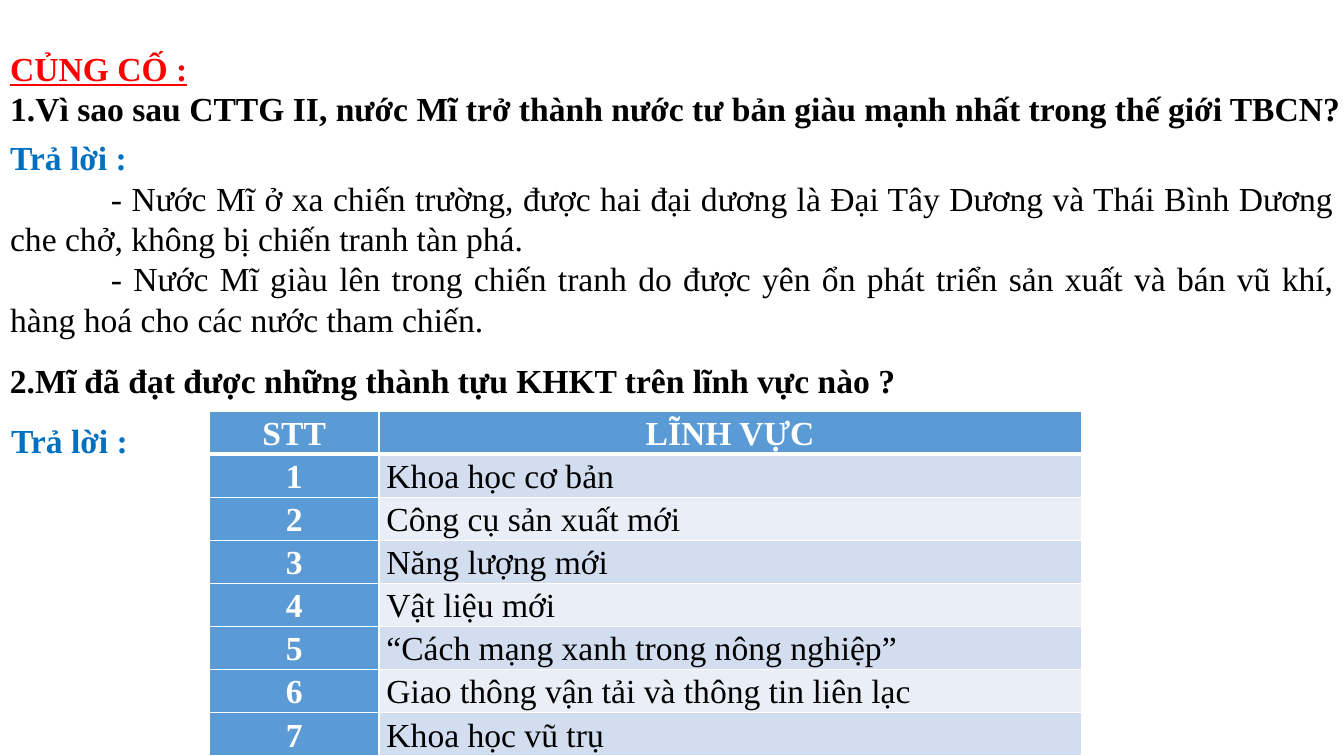
from dataclasses import dataclass
from lxml.etree import SubElement
from pptx import Presentation
from pptx.dml.color import RGBColor as RGB
from pptx.enum.text import MSO_ANCHOR as Anchor, MSO_AUTO_SIZE as Auto, PP_ALIGN as Align
from pptx.oxml.ns import qn
from pptx.util import Cm, Pt


@dataclass(frozen=True)
class Theme:
    font: str = "Times New Roman"
    size: int = 24
    red: str = "FF0000"
    blue: str = "0070C0"
    black: str = "000000"
    white: str = "FFFFFF"
    head: str = "5B9BD5"
    bands: tuple = ("D2DEEF", "EAEFF7")


T = Theme()

ANSWER = "Trả lời :"
TITLE = [
    ("CỦNG CỐ :", dict(color=T.red, bold=True, line=True)),
    ("1.Vì sao sau CTTG II, nước Mĩ trở thành nước tư bản giàu mạnh nhất "
     "trong thế giới TBCN?", dict(bold=True)),
]
POINT = dict(align=Align.JUSTIFY, indent=Cm(2.54))
REASONS = [
    (ANSWER, dict(color=T.blue, bold=True, align=Align.JUSTIFY)),
    ("- Nước Mĩ ở xa chiến trường, được hai đại dương là Đại Tây Dương và "
     "Thái Bình Dương che chở, không bị chiến tranh tàn phá.", POINT),
    ("- Nước Mĩ giàu lên trong chiến tranh do được yên ổn phát triển sản xuất "
     "và bán vũ khí, hàng hoá cho các nước tham chiến.", POINT),
]
SECOND = [("2.Mĩ đã đạt được những thành tựu KHKT trên lĩnh vực nào ?", dict(bold=True))]
REPLY = [(ANSWER, dict(color=T.blue, bold=True))]
HEADS = ("STT", "LĨNH VỰC")
FIELDS = [
    "Khoa học cơ bản",
    "Công cụ sản xuất mới",
    "Năng lượng mới",
    "Vật liệu mới",
    "“Cách mạng xanh trong nông nghiệp”",
    "Giao thông vận tải và thông tin liên lạc",
    "Khoa học vũ trụ",
]

WIDE, HIGH = Cm(33.87), Cm(19.05)
COLS = (Cm(4.27), Cm(17.7))
TABLE = (Cm(5.28), Cm(10.36), sum(COLS), Cm(8.69))


def write(para, text, color=T.black, bold=False, line=False,
          align=Align.LEFT, indent=0, space=1.0):
    para.alignment = align
    para.line_spacing = space
    para.space_before = para.space_after = Pt(0)
    props = para._p.get_or_add_pPr()
    props.set("marL", "0")
    props.set("indent", str(int(indent)))
    SubElement(props, qn("a:buNone"))
    run = para.add_run()
    run.text = text
    font = run.font
    font.name, font.size = T.font, Pt(T.size)
    font.bold, font.underline = bold, line
    font.color.rgb = RGB.from_string(color)


def fill_box(box, place, lines):
    box.left, box.top, box.width, box.height = place
    frame = box.text_frame
    frame.word_wrap = True
    frame.auto_size = Auto.NONE
    frame.vertical_anchor = Anchor.TOP
    for i, (text, look) in enumerate(lines):
        para = frame.add_paragraph() if i else frame.paragraphs[0]
        write(para, text, **look)


def edge(cell, side, width):
    line = SubElement(cell._tc.get_or_add_tcPr(), qn(f"a:{side}"), w=str(Pt(width)))
    fill = SubElement(line, qn("a:solidFill"))
    SubElement(fill, qn("a:srgbClr"), val=T.white)


def fill_cell(cell, text, row, col):
    top, label = row == 0, row == 0 or col == 0
    cell.margin_left = cell.margin_right = Cm(0.19)
    cell.margin_top = cell.margin_bottom = 0
    cell.vertical_anchor = Anchor.MIDDLE
    # Borders must come before the fill in the cell's XML.
    for side in ("lnL", "lnR", "lnT", "lnB"):
        thick = (top and side == "lnB") or (row == 1 and side == "lnT")
        edge(cell, side, 3 if thick else 1)
    cell.fill.solid()
    shade = T.head if label else T.bands[(row - 1) % 2]
    cell.fill.fore_color.rgb = RGB.from_string(shade)
    write(cell.text_frame.paragraphs[0], text, bold=label, space=1.07,
          color=T.white if label else T.black,
          align=Align.CENTER if label else Align.JUSTIFY)


def add_fields(slide):
    rows = [HEADS] + [(str(n), name) for n, name in enumerate(FIELDS, 1)]
    table = slide.shapes.add_table(len(rows), len(COLS), *TABLE).table
    for col, width in zip(table.columns, COLS):
        col.width = width
    for r, row in enumerate(rows):
        table.rows[r].height = TABLE[3] // len(rows)
        for c, text in enumerate(row):
            fill_cell(table.cell(r, c), text, r, c)


def main():
    deck = Presentation()
    deck.slide_width, deck.slide_height = WIDE, HIGH
    slide = deck.slides.add_slide(deck.slide_layouts[1])
    shapes = slide.shapes
    fill_box(shapes.title, (0, Cm(1.07), Cm(34.37), Cm(3.33)), TITLE)
    fill_box(slide.placeholders[1], (0, Cm(3.33), WIDE, Cm(5.38)), REASONS)
    place = (0, Cm(8.94), WIDE, Cm(1.27))
    fill_box(shapes.add_textbox(*place), place, SECOND)
    add_fields(slide)
    place = (Cm(0.03), Cm(10.46), Cm(3.48), Cm(1.27))
    fill_box(shapes.add_textbox(*place), place, REPLY)
    deck.save("out.pptx")


if __name__ == "__main__":
    main()
